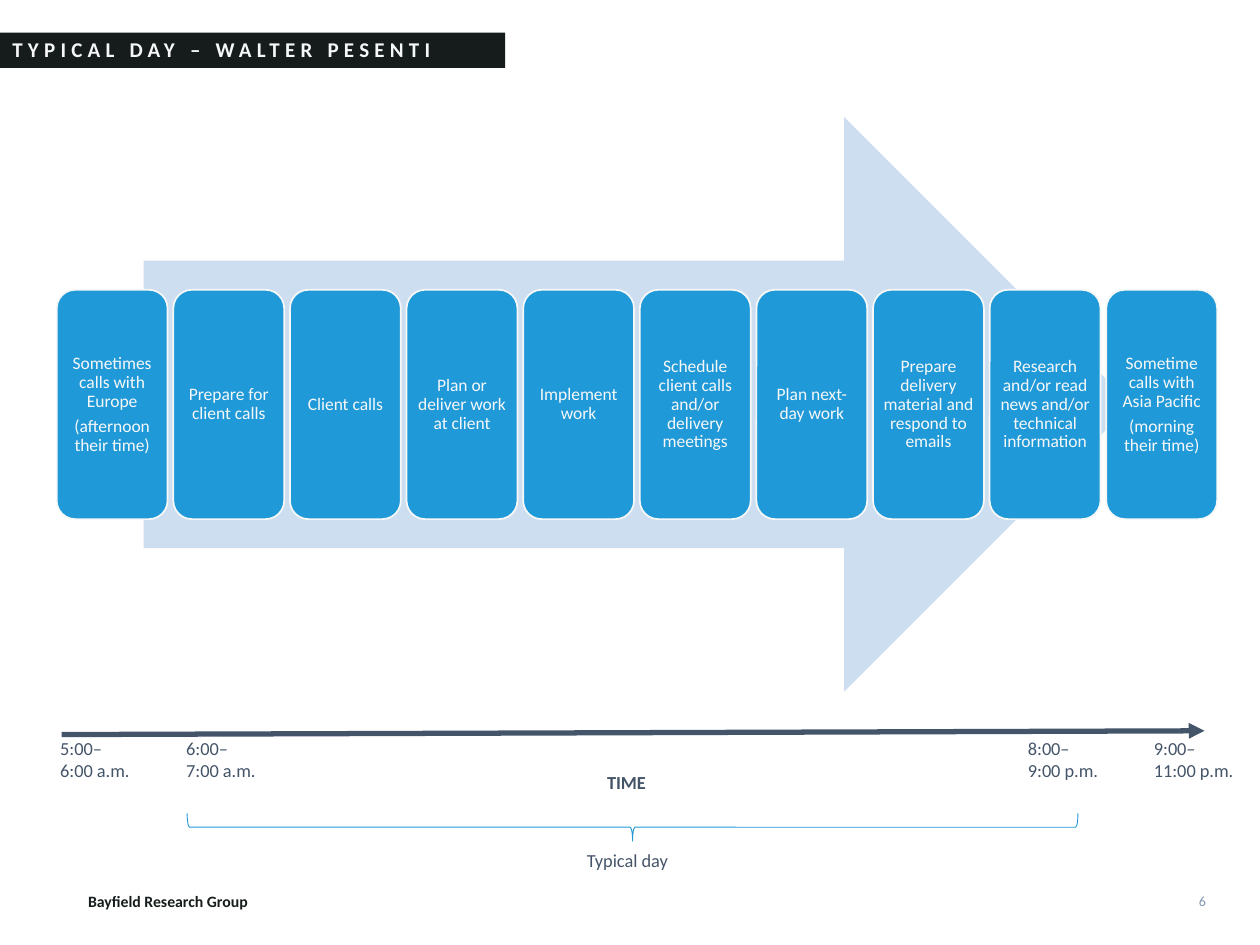
from dataclasses import dataclass

from lxml import etree
from pptx import Presentation
from pptx import util as u
from pptx.dml.color import RGBColor
from pptx.enum import shapes, text
from pptx.oxml import ns


@dataclass(frozen=True)
class Theme:
    font: str = "Calibri"
    dark: str = "161C1C"
    light: str = "F6F8F8"
    blue: str = "2099D8"
    pale: str = "CDDEF0"
    slate: str = "445469"
    muted: str = "8497B0"
    title_size: float = 12
    label_size: float = 10.5
    step_size: float = 10
    footer_size: float = 9
    number_size: float = 8


def write(shape, content, size, color, font, bold=False, align=text.PP_ALIGN.LEFT,
          anchor=text.MSO_ANCHOR.TOP, wrap=True, inset=None, line_spacing=None,
          space_after=None, tracking=None):
    frame = shape.text_frame
    frame.word_wrap = wrap
    frame.vertical_anchor = anchor
    if inset is not None:
        frame.margin_left = frame.margin_right = u.Inches(inset)
        frame.margin_top = frame.margin_bottom = u.Inches(inset)
    paragraphs = [content] if isinstance(content, str) else content
    for index, line in enumerate(paragraphs):
        paragraph = frame.add_paragraph() if index else frame.paragraphs[0]
        paragraph.text = line
        paragraph.alignment = align
        if line_spacing is not None:
            paragraph.line_spacing = line_spacing
        if space_after is not None:
            paragraph.space_after = u.Pt(space_after)
        for run in paragraph.runs:
            run.font.name = font
            run.font.size = u.Pt(size)
            run.font.bold = bold
            run.font.color.rgb = RGBColor.from_string(color)
            if tracking is not None:
                run.font._element.set("spc", str(tracking * 100))


class DaySlide:
    def __init__(self, presentation, theme):
        self.theme = theme
        self.slide = presentation.slides.add_slide(presentation.slide_layouts[6])

    def label(self, content, left, top, width=1, height=1, wrap=False, **style):
        box = self.slide.shapes.add_textbox(*map(u.Inches, (left, top, width, height)))
        style = {"size": self.theme.label_size, "color": self.theme.slate, **style}
        write(box, content, font=self.theme.font, wrap=wrap, **style)

    def shape(self, kind, left, top, width, height, fill=None, line=None, line_width=1):
        shape = self.slide.shapes.add_shape(kind, *map(u.Inches, (left, top, width, height)))
        shape.shadow.inherit = False
        if fill:
            shape.fill.solid()
            shape.fill.fore_color.rgb = RGBColor.from_string(fill)
        else:
            shape.fill.background()
        if line:
            shape.line.color.rgb = RGBColor.from_string(line)
            shape.line.width = u.Pt(line_width)
        else:
            shape.line.fill.background()
        return shape

    def title(self, content):
        bar = self.shape(shapes.MSO_SHAPE.RECTANGLE, 0, 0.26, 4.01, 0.28, self.theme.dark)
        write(bar, content, self.theme.title_size, self.theme.light, self.theme.font,
              bold=True, anchor=text.MSO_ANCHOR.MIDDLE, line_spacing=0.9, tracking=3)

    def step(self, content, left):
        card = self.shape(shapes.MSO_SHAPE.ROUNDED_RECTANGLE, left, 2.3, 0.88, 1.82,
                          self.theme.blue, self.theme.light)
        write(card, content, self.theme.step_size, self.theme.light, self.theme.font,
              align=text.PP_ALIGN.CENTER, anchor=text.MSO_ANCHOR.MIDDLE,
              inset=0.04, line_spacing=0.9, space_after=3.5)

    def time_axis(self, start, end):
        axis = self.slide.shapes.add_connector(
            shapes.MSO_CONNECTOR.STRAIGHT, *map(u.Inches, (*start, *end)))
        axis.line.color.rgb = RGBColor.from_string(self.theme.slate)
        axis.line.width = u.Pt(3)
        etree.SubElement(axis.line._get_or_add_ln(), ns.qn("a:tailEnd"), type="triangle")
        etree.SubElement(axis._element.spPr, ns.qn("a:effectLst"))

    def brace(self):
        brace = self.shape(shapes.MSO_SHAPE.RIGHT_BRACE, 4.91, 3.03, 0.22, 7.07,
                           line=self.theme.blue, line_width=0.5)
        brace.rotation = 90


STEPS = [
    ["Sometimes calls with Europe", "(afternoon their time)"],
    "Prepare for client calls",
    "Client calls",
    "Plan or deliver work at client",
    "Implement work",
    "Schedule client calls and/or delivery meetings",
    "Plan next-day work",
    "Prepare delivery material and respond to emails",
    "Research and/or read news and/or technical information",
    ["Sometime calls with Asia Pacific", "(morning their time)"],
]
FIRST_STEP, LAST_STEP = 0.45, 8.78
TIMES = [
    ("5:00–\n6:00 a.m.", 0.38),
    ("6:00–\n7:00 a.m.", 1.38),
    ("8:00–\n9:00 p.m.", 8.06),
    ("9:00–\n11:00 p.m.", 9.06),
]


def main():
    presentation = Presentation()
    presentation.slide_width = u.Inches(10)
    presentation.slide_height = u.Inches(7.5)
    theme = Theme()
    day = DaySlide(presentation, theme)

    day.label("Bayfield Research Group", 0.6, 7.03, 1.55, 0.25, size=theme.footer_size,
              color=theme.dark, bold=True, anchor=text.MSO_ANCHOR.MIDDLE)
    day.label("6", 7.29, 6.95, 2.38, 0.4, wrap=True, size=theme.number_size,
              color=theme.muted, align=text.PP_ALIGN.RIGHT, anchor=text.MSO_ANCHOR.MIDDLE)
    day.title("TYPICAL DAY – WALTER PESENTI")

    day.shape(shapes.MSO_SHAPE.RIGHT_ARROW, 1.14, 0.93, 7.84, 4.56, theme.pale)
    pitch = (LAST_STEP - FIRST_STEP) / (len(STEPS) - 1)
    for index, content in enumerate(STEPS):
        day.step(content, FIRST_STEP + index * pitch)

    day.time_axis((0.49, 5.83), (9.56, 5.8))
    for content, left in TIMES:
        day.label(content, left, 5.8)
    day.label("TIME", 4.72, 6.07, bold=True)
    day.brace()
    day.label("Typical day", 4.56, 6.69)

    presentation.save("out.pptx")


if __name__ == "__main__":
    main()
